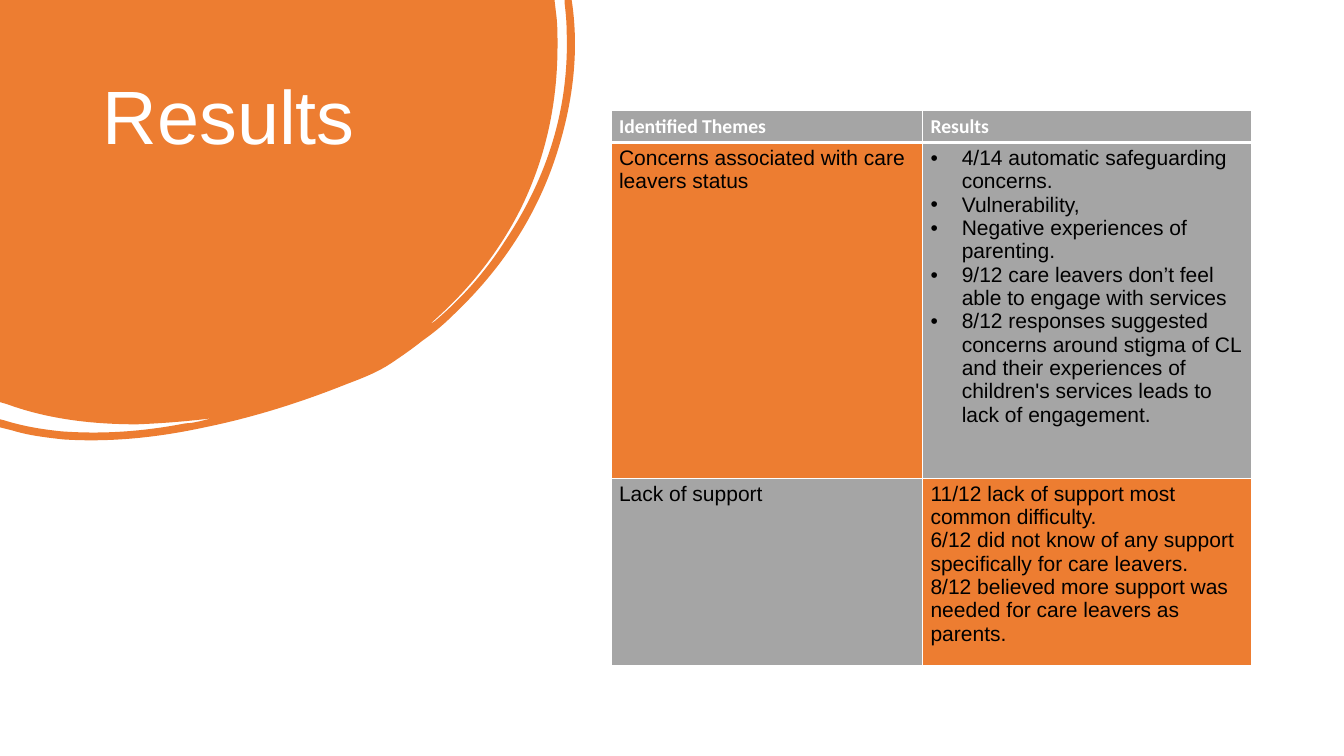
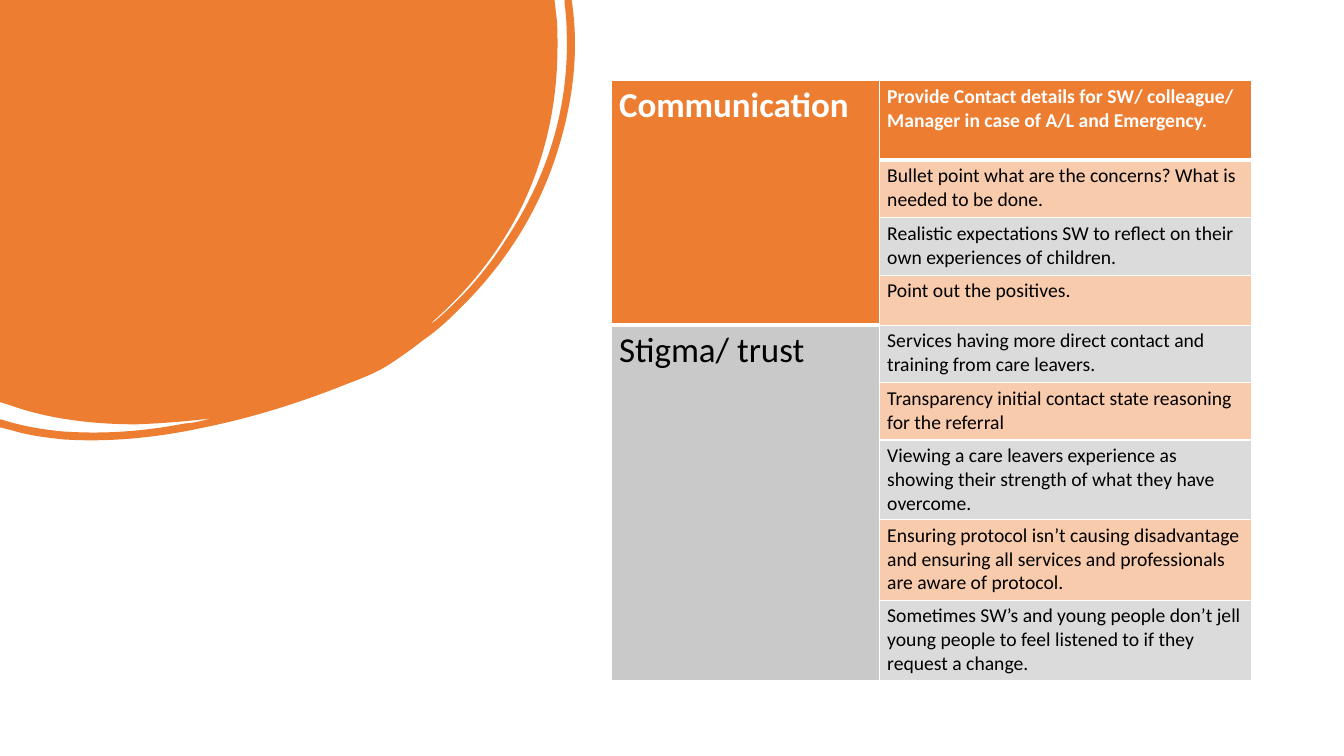
from lxml.etree import SubElement
from pptx import Presentation
from pptx.dml.color import RGBColor
from pptx.oxml.ns import qn
from pptx.util import Inches, Pt

ORANGE, GREY, WHITE, BLACK = "ED7D31", "A5A5A5", "FFFFFF", "000000"
PALE_ORANGE, PALE_GREY, MID_GREY = "F8CBAD", "DBDBDB", "C9C9C9"

BLOB_SIZE = (5.71, 4.37)
BLOB = [
    (5.5, 0), (5.52, 0.17),
    (5.53, 0.26, 5.53, 0.36, 5.53, 0.45),
    (5.53, 1.01, 5.42, 1.54, 5.18, 2.04),
    (4.96, 2.49, 4.65, 2.88, 4.27, 3.21),
    (4.29, 3.21, 4.3, 3.19, 4.32, 3.18),
    (4.59, 2.95, 4.82, 2.69, 5.01, 2.39),
    (5.43, 1.76, 5.65, 1.07, 5.62, 0.3),
    (5.62, 0.21, 5.61, 0.12, 5.6, 0.03),
    (5.6, 0), (5.67, 0), (5.68, 0.07),
    (5.74, 0.54, 5.68, 1.02, 5.53, 1.5),
    (5.33, 2.14, 4.97, 2.68, 4.48, 3.14),
    (4.39, 3.23, 4.29, 3.31, 4.19, 3.38),
    (4.09, 3.46, 3.99, 3.53, 3.87, 3.61),
    (3.75, 3.69, 3.6, 3.75, 3.44, 3.81),
    (2.99, 3.99, 2.52, 4.14, 2.03, 4.24),
    (1.57, 4.34, 1.1, 4.39, 0.63, 4.36),
    (0.45, 4.34, 0.28, 4.32, 0.12, 4.27),
    (0, 4.24), (0, 4.16), (0.04, 4.17),
    (0.23, 4.23, 0.42, 4.26, 0.61, 4.28),
    (1.03, 4.31, 1.43, 4.28, 1.84, 4.2),
    (1.89, 4.2, 1.93, 4.19, 1.98, 4.18),
    (2.02, 4.17, 2.06, 4.16, 2.1, 4.15),
    (1.86, 4.18, 1.61, 4.2, 1.36, 4.21),
    (0.92, 4.21, 0.48, 4.16, 0.07, 4.01),
    (0, 3.99),
]

THEMES = [
    ("Concerns associated with care leavers status", [
        "4/14 automatic safeguarding concerns.",
        "Vulnerability,",
        "Negative experiences of parenting.",
        "9/12 care leavers don’t feel able to engage with services",
        "8/12 responses suggested concerns around stigma of CL and their "
        "experiences of children's services leads to lack of engagement.",
    ]),
    ("Lack of support", [
        "11/12 lack of support most common difficulty.",
        "6/12 did not know of any support specifically for care leavers.",
        "8/12 believed more support was needed for care leavers as parents.",
    ]),
]

ADVICE = [
    ("Communication", [
        "Provide Contact details for SW/ colleague/ Manager in case of A/L and Emergency.",
        "Bullet point what are the concerns? What is needed to be done.",
        "Realistic expectations SW to reflect on their own experiences of children.",
        "Point out the positives.",
    ]),
    ("Stigma/ trust", [
        "Services having more direct contact and training from care leavers.",
        "Transparency initial contact state reasoning for the referral",
        "Viewing a care leavers experience as showing their strength of what they have overcome.",
        "Ensuring protocol isn’t causing disadvantage and ensuring all services "
        "and professionals are aware of protocol.",
        "Sometimes SW’s and young people don’t jell young people to feel "
        "listened to if they request a change.",
    ]),
]


def paint(fmt, color):
    """Give a fill or a font a solid hex colour."""
    if hasattr(fmt, "solid"):
        fmt.solid()
        fmt.fore_color.rgb = RGBColor.from_string(color)
    else:
        fmt.color.rgb = RGBColor.from_string(color)


def style_text(tf, font, size, color, bold=False):
    """Format every run of a text frame."""
    for p in tf.paragraphs:
        for r in p.runs:
            r.font.name, r.font.size, r.font.bold = font, Pt(size), bold
            paint(r.font, color)


def bend_segments(sp, segments):
    """Turn each straight segment that has control points into a Bezier curve."""
    lines = list(sp._element.iter(qn("a:lnTo")))
    for line, seg in zip(lines, segments):
        if len(seg) == 6:
            line.clear()
            curve = SubElement(line.getparent(), qn("a:cubicBezTo"))
            line.getparent().replace(line, curve)
            for x, y in zip(seg[::2], seg[1::2]):
                SubElement(curve, qn("a:pt"), x=str(Inches(x)), y=str(Inches(y)))


def add_blob(slide, left, top):
    """Draw the orange corner shape with its brushed rim."""
    builder = slide.shapes.build_freeform(0, 0)
    ends = [(Inches(seg[-2]), Inches(seg[-1])) for seg in BLOB]
    builder.add_line_segments(ends, close=True)
    sp = builder.convert_to_shape(Inches(left), Inches(top))
    bend_segments(sp, BLOB)
    sp.width, sp.height = map(Inches, BLOB_SIZE)
    outline = next(sp._element.iter(qn("a:path")))
    outline.set("w", str(sp.width))
    outline.set("h", str(sp.height))
    sp.shadow.inherit = False
    paint(sp.fill, ORANGE)
    sp.line.fill.background()


def add_title(slide, text, left, top, width, height):
    """Place the white slide title."""
    box = slide.shapes.add_textbox(*map(Inches, (left, top, width, height)))
    tf = box.text_frame
    tf.word_wrap = True
    tf.text = text
    tf.paragraphs[0].line_spacing = 0.9
    style_text(tf, "Arial", 54, WHITE)


def add_grid(slide, left, top, cols, rows):
    """Add a plain table with the given column widths and row heights."""
    frame = slide.shapes.add_table(len(rows), len(cols), *map(
        Inches, (left, top, sum(cols), sum(rows))))
    table = frame.table
    table.first_row = table.horz_banding = False
    for col, width in zip(table.columns, cols):
        col.width = Inches(width)
    for row, height in zip(table.rows, rows):
        row.height = Inches(height)
    return table


def fill_cell(cell, text, fill, font, size, color=BLACK, header=False):
    """Write, border and colour one cell; header cells are bold with a thick base."""
    cell.margin_left = cell.margin_right = Inches(0.08)
    cell.margin_top = cell.margin_bottom = Inches(0.04)
    tc_pr = cell._tc.get_or_add_tcPr()
    edges = {"a:lnL": 1, "a:lnR": 1, "a:lnB": 3 if header else 1}
    for tag, width in edges.items():
        ln = SubElement(tc_pr, qn(tag), w=str(Pt(width)))
        SubElement(SubElement(ln, qn("a:solidFill")), qn("a:srgbClr"), val=WHITE)
    paint(cell.fill, fill)
    cell.text_frame.text = text
    style_text(cell.text_frame, font, size, color, header)


def add_bullets(tf, indent):
    """Give each paragraph a hanging bullet."""
    for p in tf.paragraphs:
        p_pr = p._p.get_or_add_pPr()
        p_pr.set("marL", str(Inches(indent)))
        p_pr.set("indent", str(-Inches(indent)))
        SubElement(p_pr, qn("a:buFont"), typeface="Arial")
        SubElement(p_pr, qn("a:buChar"), char="•")


def add_themes_table(slide, left, top):
    """Fill the table of themes and results in a checkerboard of two colours."""
    table = add_grid(slide, left, top, [3.09, 3.26], [0.31, 3.33, 1.86])
    for c, heading in enumerate(("Identified Themes", "Results")):
        fill_cell(table.cell(0, c), heading, GREY, "Calibri", 14, WHITE, header=True)
    for r, (theme, results) in enumerate(THEMES, 1):
        for c, text in enumerate((theme, "\n".join(results))):
            fill = ORANGE if (r + c) % 2 else GREY
            fill_cell(table.cell(r, c), text, fill, "Arial", 15)
    add_bullets(table.cell(1, 1).text_frame, 0.31)


def add_advice_table(slide, left, top):
    """Fill the table of advice, with one merged cell per topic."""
    heights = [0.79, 0.57, 0.57, 0.49, 0.57, 0.57, 0.79, 0.8, 0.8]
    table = add_grid(slide, left, top, [2.66, 3.69], heights)
    row = 0
    for topic, tips in ADVICE:
        first = row == 0
        topic_cell = table.cell(row, 0)
        topic_cell.merge(table.cell(row + len(tips) - 1, 0))
        fill_cell(topic_cell, topic, ORANGE if first else MID_GREY, "Calibri", 25,
                  WHITE if first else BLACK, header=first)
        for tip in tips:
            header = row == 0
            fill = ORANGE if header else PALE_ORANGE if row % 2 else PALE_GREY
            fill_cell(table.cell(row, 1), tip, fill, "Calibri", 14,
                      WHITE if header else BLACK, header)
            row += 1


def add_slide(prs):
    """Add a blank slide with the shared corner shape."""
    slide = prs.slides.add_slide(prs.slide_layouts[6])
    add_blob(slide, 0, 0)
    return slide


def main():
    """Build and save both slides."""
    prs = Presentation()
    prs.slide_width, prs.slide_height = Inches(13.33), Inches(7.5)
    s = add_slide(prs)
    add_title(s, "Results", 0.92, 0.74, 3.52, 2.22)
    add_themes_table(s, 6.06, 1.1)
    add_advice_table(add_slide(prs), 6.06, 0.8)
    prs.save("out.pptx")


if __name__ == "__main__":
    main()
